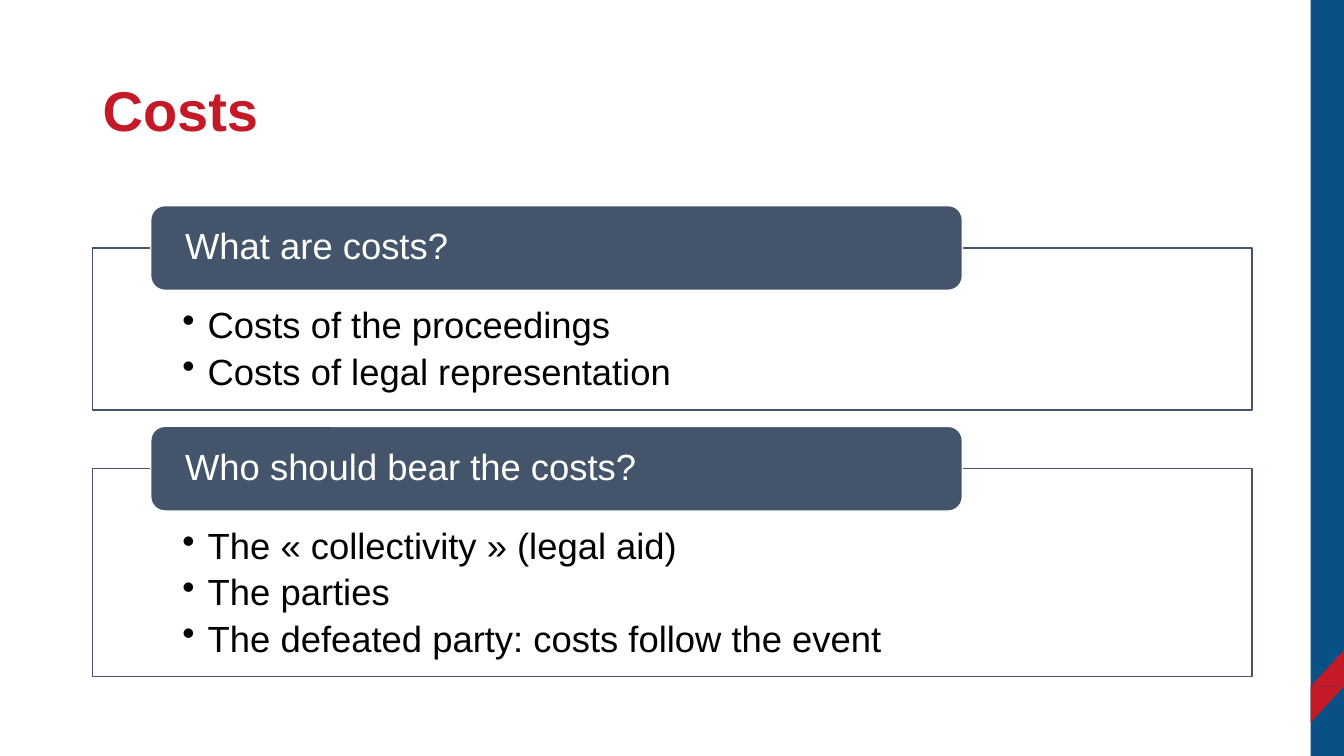
from pptx import Presentation
from pptx.dml.color import RGBColor
from pptx.enum import shapes, text
from pptx.oxml import ns
from pptx.util import Inches, Pt
from lxml import etree

TITLE = "Costs"
TOPICS = [
    ("What are costs?", ["Costs of the proceedings", "Costs of legal representation"]),
    ("Who should bear the costs?", ["The « collectivity » (legal aid)", "The parties",
                                    "The defeated party: costs follow the event"]),
]
RED = RGBColor(0xC4, 0x19, 0x27)
BLUE = RGBColor(0x09, 0x51, 0x84)
SLATE = RGBColor(0x44, 0x54, 0x6A)
WHITE = RGBColor(0xFF, 0xFF, 0xFF)
BLACK = RGBColor(0, 0, 0)
WIDE, HIGH = 13.33, 7.5
LEFT, SPAN = 0.92, 11.5
BAND, FOLD, TIP = 0.33, 6.81, 0.36
HEAD, ROW, PAD, GAP = 0.84, 0.45, 0.71, 0.16
KIND = shapes.MSO_SHAPE


def draw(slide, kind, box, fill, line=None):
    """Add a flat preset shape at a box given in inches."""
    item = slide.shapes.add_shape(kind, *map(Inches, box))
    item.shadow.inherit = False
    item.fill.solid()
    item.fill.fore_color.rgb = fill
    if line is None:
        item.line.fill.background()
    else:
        item.line.color.rgb = line
        item.line.width = Pt(1)
    return item


def write(item, lines, size, color, inset, anchor, bold=False, bullet=False, after=0):
    """Fill a shape with left-aligned paragraphs."""
    frame = item.text_frame
    frame.word_wrap = True
    frame.vertical_anchor = anchor
    (frame.margin_left, frame.margin_top,
     frame.margin_right, frame.margin_bottom) = map(Inches, inset)
    frame.text = "\n".join(lines)
    for para in frame.paragraphs:
        para.alignment = text.PP_ALIGN.LEFT
        para.line_spacing = 0.9
        para.space_after = Pt(after)
        if bullet:
            props = para._p.get_or_add_pPr()
            props.set("marL", str(Inches(0.25)))
            props.set("indent", str(-Inches(0.25)))
            etree.SubElement(props, ns.qn("a:buChar")).set("char", "•")
        for run in para.runs:
            run.font.name = "Arial"
            run.font.size = Pt(size)
            run.font.bold = bold
            run.font.color.rgb = color


def main():
    """Build and save the slide."""
    deck = Presentation()
    deck.slide_width, deck.slide_height = Inches(WIDE), Inches(HIGH)
    slide = deck.slides.add_slide(deck.slide_layouts[6])
    edge = WIDE - BAND
    draw(slide, KIND.RECTANGLE, (edge, 0, BAND, HIGH), BLUE)
    for flip, top in (("flipV", FOLD), ("flipH", FOLD - TIP)):
        tip = draw(slide, KIND.RIGHT_TRIANGLE, (edge, top, BAND, TIP), RED)
        tip._element.spPr.find(ns.qn("a:xfrm")).set(flip, "1")

    title = slide.shapes.add_textbox(*map(Inches, (LEFT, 0.4, SPAN, 1.45)))
    write(title, [TITLE], 40, RED, (0.1, 0.05, 0.1, 0.05), text.MSO_ANCHOR.MIDDLE, bold=True)

    top = 2.04
    for name, points in TOPICS:
        mid = top + HEAD / 2
        deep = PAD + ROW * len(points)
        panel = draw(slide, KIND.RECTANGLE, (LEFT, mid, SPAN, deep), WHITE, SLATE)
        write(panel, points, 26, BLACK, (0.89, 0.59, 0.89, 0.2), text.MSO_ANCHOR.TOP,
              bullet=True, after=5)
        head = draw(slide, KIND.ROUNDED_RECTANGLE,
                    (LEFT + SPAN * 0.05, top, SPAN * 0.7, HEAD), SLATE, WHITE)
        write(head, [name], 26, WHITE, (0.3, 0, 0.3, 0), text.MSO_ANCHOR.MIDDLE)
        top = mid + deep + GAP
    deck.save("out.pptx")


if __name__ == "__main__":
    main()
